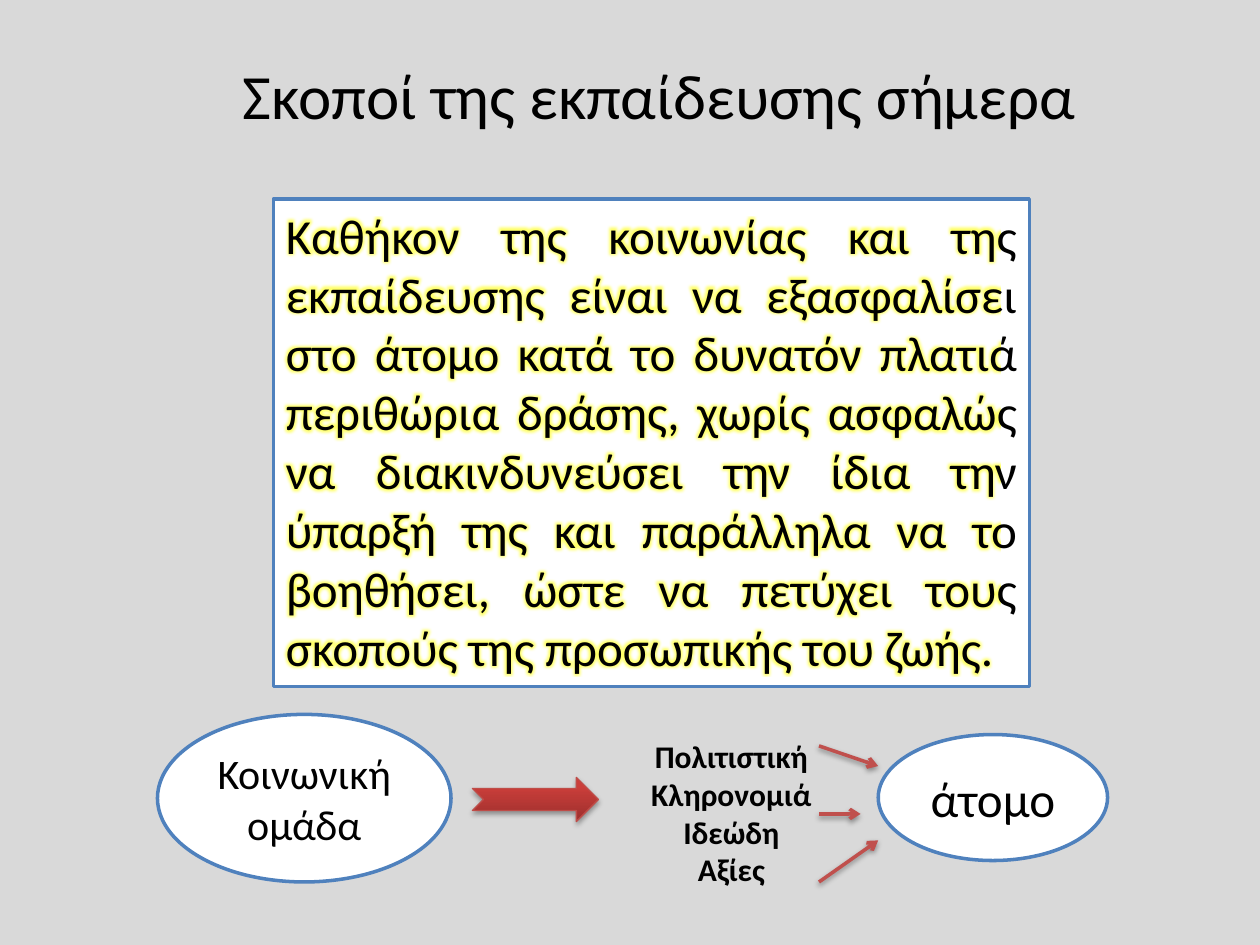
from dataclasses import dataclass

from lxml import etree
from pptx import Presentation
from pptx.dml.color import RGBColor
from pptx.enum.shapes import MSO_CONNECTOR, MSO_SHAPE
from pptx.enum.text import MSO_ANCHOR, MSO_AUTO_SIZE, PP_ALIGN
from pptx.oxml.ns import qn
from pptx.util import Inches, Pt

RECT, OVAL, NOTCH = MSO_SHAPE.RECTANGLE, MSO_SHAPE.OVAL, MSO_SHAPE.NOTCHED_RIGHT_ARROW
STRAIGHT = MSO_CONNECTOR.STRAIGHT
TOP, MIDDLE = MSO_ANCHOR.TOP, MSO_ANCHOR.MIDDLE
LEFT, CENTER, JUSTIFY = PP_ALIGN.LEFT, PP_ALIGN.CENTER, PP_ALIGN.JUSTIFY
GROW, FIXED = MSO_AUTO_SIZE.SHAPE_TO_FIT_TEXT, MSO_AUTO_SIZE.NONE


@dataclass(frozen=True)
class Theme:
    font: str = "Calibri"
    back: str = "D9D9D9"
    paper: str = "FFFFFF"
    ink: str = "000000"
    blue: str = "4F81BD"
    red: str = "C0504D"
    rim: str = "BF4C48"
    glow: str = "FFFF00"
    ramp: tuple = ((0, "9C2F2D"), (80, "CB3E3A"), (100, "CE3B37"))
    title: int = 36
    large: int = 28
    medium: int = 24
    small: int = 18


THEME = Theme()


def paint(fill, color):
    fill.solid()
    fill.fore_color.rgb = RGBColor.from_string(color)


def stroke(line, color, width):
    paint(line.fill, color)
    line.width = Pt(width)


def add(parent, tag, **attrs):
    return etree.SubElement(parent, qn(tag), {k: str(v) for k, v in attrs.items()})


def tint(parent, color, alpha):
    add(add(parent, "a:srgbClr", val=color), "a:alpha", val=alpha * 1000)


def shade(shape, dist, alpha):
    effects = add(shape._element.spPr, "a:effectLst")
    shadow = add(effects, "a:outerShdw", blurRad=Pt(3.1), dist=Pt(dist),
                 dir=5400000, rotWithShape=0)
    tint(shadow, THEME.ink, alpha)


def halo(run):
    props = run._r.get_or_add_rPr()
    effects = add(props, "a:effectLst")
    tint(add(effects, "a:glow", rad=Pt(5)), THEME.glow, 60)
    props.find(qn("a:solidFill")).addnext(effects)


def write(shape, text, size, align=CENTER, anchor=TOP, bold=False,
          wrap=True, fit=FIXED, glow=False):
    frame = shape.text_frame
    frame.word_wrap = wrap
    frame.auto_size = fit
    frame.vertical_anchor = anchor
    for i, line in enumerate(text.split("\n")):
        para = frame.add_paragraph() if i else frame.paragraphs[0]
        para.alignment = align
        run = para.add_run()
        run.text = line
        font = run.font
        font.name, font.size, font.bold = THEME.font, Pt(size), bold
        font.color.rgb = RGBColor.from_string(THEME.ink)
        if glow:
            halo(run)


def label(slide, box, text, size, **form):
    write(slide.shapes.add_textbox(*map(Inches, box)), text, size, fit=GROW, **form)


def panel(slide, kind, box, text, size, **form):
    shape = slide.shapes.add_shape(kind, *map(Inches, box))
    shape.shadow.inherit = False
    paint(shape.fill, THEME.paper)
    stroke(shape.line, THEME.blue, 2)
    write(shape, text, size, **form)


def block(slide, box):
    shape = slide.shapes.add_shape(NOTCH, *map(Inches, box))
    shape.fill.gradient()
    shape.fill.gradient_angle = 90
    stops = shape._element.spPr.find(qn("a:gradFill")).find(qn("a:gsLst"))
    for stop in list(stops):
        stops.remove(stop)
    for pos, color in THEME.ramp:
        add(add(stops, "a:gs", pos=pos * 1000), "a:srgbClr", val=color)
    stroke(shape.line, THEME.rim, 0.75)
    shade(shape, 1.8, 35)


def arrow(slide, start, end):
    link = slide.shapes.add_connector(STRAIGHT, *map(Inches, start + end))
    stroke(link.line, THEME.red, 2)
    add(link.line._get_or_add_ln(), "a:tailEnd", type="arrow")
    shade(link, 1.6, 38)


def main():
    deck = Presentation()
    deck.slide_width, deck.slide_height = Inches(10), Inches(7.5)
    slide = deck.slides.add_slide(deck.slide_layouts[6])
    paint(slide.background.fill, THEME.back)

    label(slide, (1.83, 0.4, 6.99, 0.71), "Σκοποί της εκπαίδευσης σήμερα",
          THEME.title, align=LEFT, wrap=False)
    panel(slide, RECT, (2.17, 1.58, 6, 3.87),
          "Καθήκον της κοινωνίας και της εκπαίδευσης είναι να εξασφαλίσει στο "
          "άτομο κατά το δυνατόν πλατιά περιθώρια δράσης, χωρίς ασφαλώς να "
          "διακινδυνεύσει την ίδια την ύπαρξή της και παράλληλα να το βοηθήσει, "
          "ώστε να πετύχει τους σκοπούς της προσωπικής του ζωής.",
          THEME.large, align=JUSTIFY, fit=GROW, glow=True)
    panel(slide, OVAL, (1.25, 5.67, 2.33, 1.33), "Κοινωνική ομάδα",
          THEME.medium, anchor=MIDDLE)
    panel(slide, OVAL, (6.97, 5.83, 1.82, 1), "άτομο", THEME.large, anchor=MIDDLE)
    block(slide, (3.75, 6.17, 1, 0.35))
    label(slide, (4.92, 5.8, 1.77, 1.31),
          "Πολιτιστική\nΚληρονομιά\nΙδεώδη\nΑξίες", THEME.small, bold=True)
    for top, end in ((5.92, (6.97, 6.08)), (7, (6.97, 6.67)), (6.46, (6.83, 6.46))):
        arrow(slide, (6.5, top), end)

    deck.save("out.pptx")


if __name__ == "__main__":
    main()
